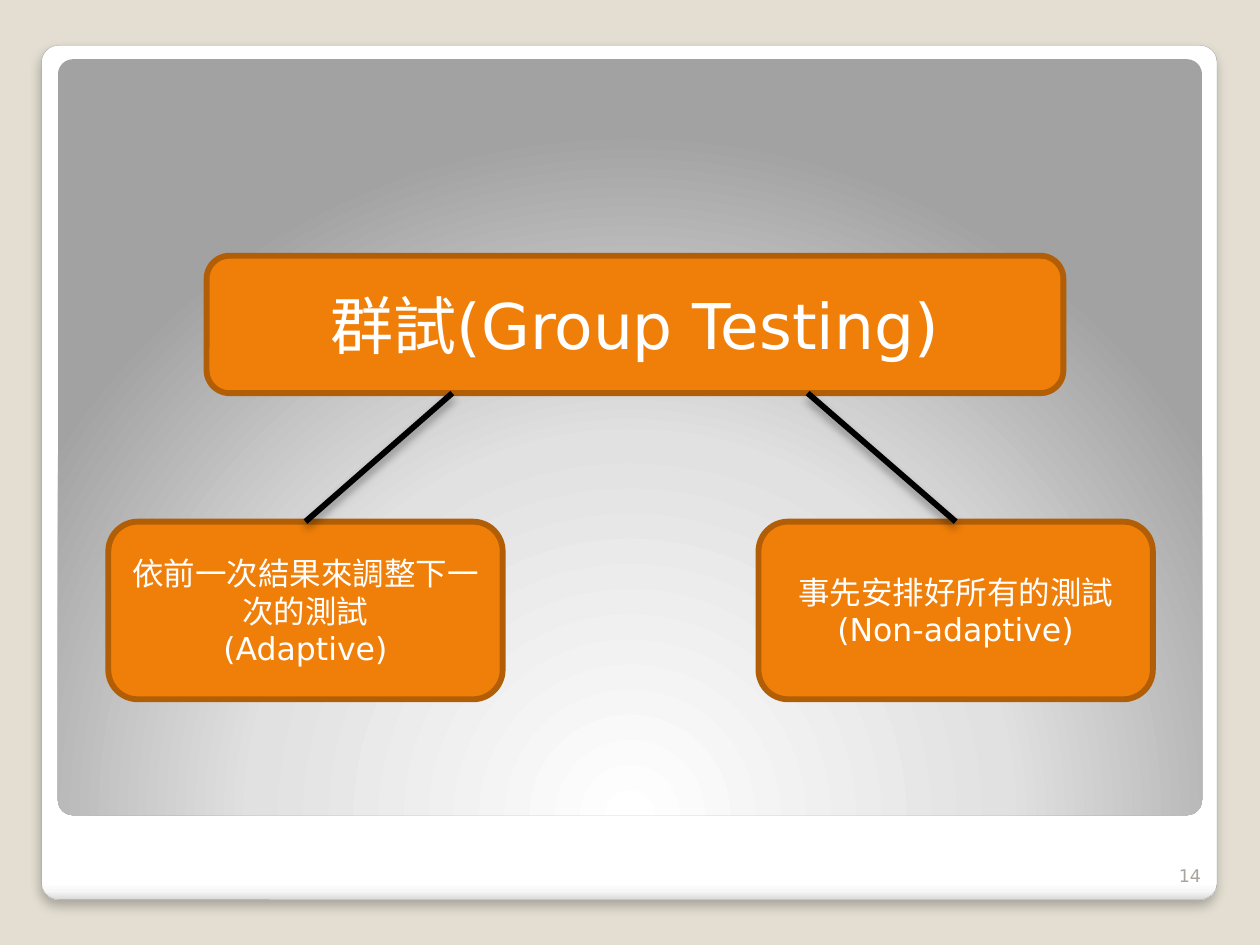
from pptx import Presentation
from pptx.dml.color import RGBColor
from pptx.enum.shapes import MSO_CONNECTOR, MSO_SHAPE
from pptx.enum.text import MSO_ANCHOR, PP_ALIGN
from pptx.oxml import parse_xml
from pptx.oxml.ns import nsdecls, qn
from pptx.util import Inches, Pt

theme = {
    "font": "DejaVu Sans",
    "back": "E3DED1",
    "box": "F07F09",
    "edge": "B25E07",
    "rim": "A4A4A4",
    "text": "FFFFFF",
    "link": "000000",
    "page": "A8A49B",
    "card": [(0, "FFFFFF"), (98, "FFFFFF"), (99, "F7F7F7"), (100, "DADADA")],
    "glow": [(0, "FFFFFF"), (55, "E1E1E1"), (100, "A2A2A2")],
    "head": 36,
    "body": 18,
    "small": 10,
    "line": 3.35,
}


def blend(shape, stops, way):
    marks = "".join(
        f'<a:gs pos="{pos * 1000}"><a:srgbClr val="{tone}"/></a:gs>' for pos, tone in stops
    )
    shape.fill.background()
    props = shape.element.spPr
    props.replace(
        props.find(qn("a:noFill")),
        parse_xml(f'<a:gradFill {nsdecls("a")}><a:gsLst>{marks}</a:gsLst>{way}</a:gradFill>'),
    )


def shade(shape, alpha, blur, dist):
    props = shape.element.spPr
    for old in props.findall(qn("a:effectLst")):
        props.remove(old)
    props.append(parse_xml(
        f'<a:effectLst {nsdecls("a")}><a:outerShdw blurRad="{Pt(blur)}" dist="{Pt(dist)}" '
        f'dir="5400000" algn="ctr" rotWithShape="0"><a:srgbClr val="000000">'
        f'<a:alpha val="{alpha * 1000}"/></a:srgbClr></a:outerShdw></a:effectLst>'
    ))


deck = Presentation()
deck.slide_width, deck.slide_height = Inches(10), Inches(7.5)
slide = deck.slides.add_slide(deck.slide_layouts[6])
slide.background.fill.solid()
slide.background.fill.fore_color.rgb = RGBColor.from_string(theme["back"])
shapes = slide.shapes

card = shapes.add_shape(
    MSO_SHAPE.ROUNDED_RECTANGLE, Inches(0.33), Inches(0.36), Inches(9.33), Inches(6.78))
panel = shapes.add_shape(
    MSO_SHAPE.ROUNDED_RECTANGLE, Inches(0.46), Inches(0.47), Inches(9.08), Inches(6))
for shape in (card, panel):
    shape.adjustments[0] = 0.02
    shape.shadow.inherit = False
blend(card, theme["card"], '<a:lin ang="5400000" scaled="0"/>')
card.line.color.rgb = RGBColor.from_string(theme["rim"])
card.line.width = Pt(0.16)
shade(card, 25, 6, 4)
blend(panel, theme["glow"],
      '<a:path path="circle"><a:fillToRect l="50000" t="175000" r="50000" b="-75000"/></a:path>')
panel.line.fill.background()

page = shapes.add_textbox(Inches(9.13), Inches(6.68), Inches(0.5), Inches(0.4))
top = shapes.add_shape(
    MSO_SHAPE.ROUNDED_RECTANGLE, Inches(1.64), Inches(2.03), Inches(6.8), Inches(1.09))
left, right = [
    shapes.add_shape(
        MSO_SHAPE.ROUNDED_RECTANGLE, Inches(x), Inches(4.14), Inches(3.13), Inches(1.41))
    for x in (0.86, 6.02)
]

for box in (top, left, right):
    box.shadow.inherit = False
    box.fill.solid()
    box.fill.fore_color.rgb = RGBColor.from_string(theme["box"])
    box.line.color.rgb = RGBColor.from_string(theme["edge"])
    box.line.width = Pt(theme["line"])

texts = [
    (page, ["14"], "small", "page", PP_ALIGN.RIGHT, MSO_ANCHOR.BOTTOM),
    (top, ["群試(Group Testing)"], "head", "text", PP_ALIGN.CENTER, MSO_ANCHOR.MIDDLE),
    (left, ["依前一次結果來調整下一次的測試", "(Adaptive)"],
     "body", "text", PP_ALIGN.CENTER, MSO_ANCHOR.MIDDLE),
    (right, ["事先安排好所有的測試(Non-adaptive)"],
     "body", "text", PP_ALIGN.CENTER, MSO_ANCHOR.MIDDLE),
]
for shape, lines, size, tone, align, anchor in texts:
    frame = shape.text_frame
    for name, value in {"word_wrap": True, "vertical_anchor": anchor}.items():
        setattr(frame, name, value)
    frame.text = "\n".join(lines)
    for para in frame.paragraphs:
        para.alignment = align
        font = para.runs[0].font
        for name, value in {"name": theme["font"], "size": Pt(theme[size])}.items():
            setattr(font, name, value)
        font.color.rgb = RGBColor.from_string(theme[tone])

for start, box in ((3.59, left), (6.41, right)):
    link = shapes.add_connector(
        MSO_CONNECTOR.STRAIGHT, Inches(start), top.top + top.height,
        box.left + box.width // 2, box.top)
    link.end_connect(box, 0)
    link.line.color.rgb = RGBColor.from_string(theme["link"])
    link.line.width = Pt(theme["line"])
    shade(link, 40, 5.2, 3)

deck.save("out.pptx")
